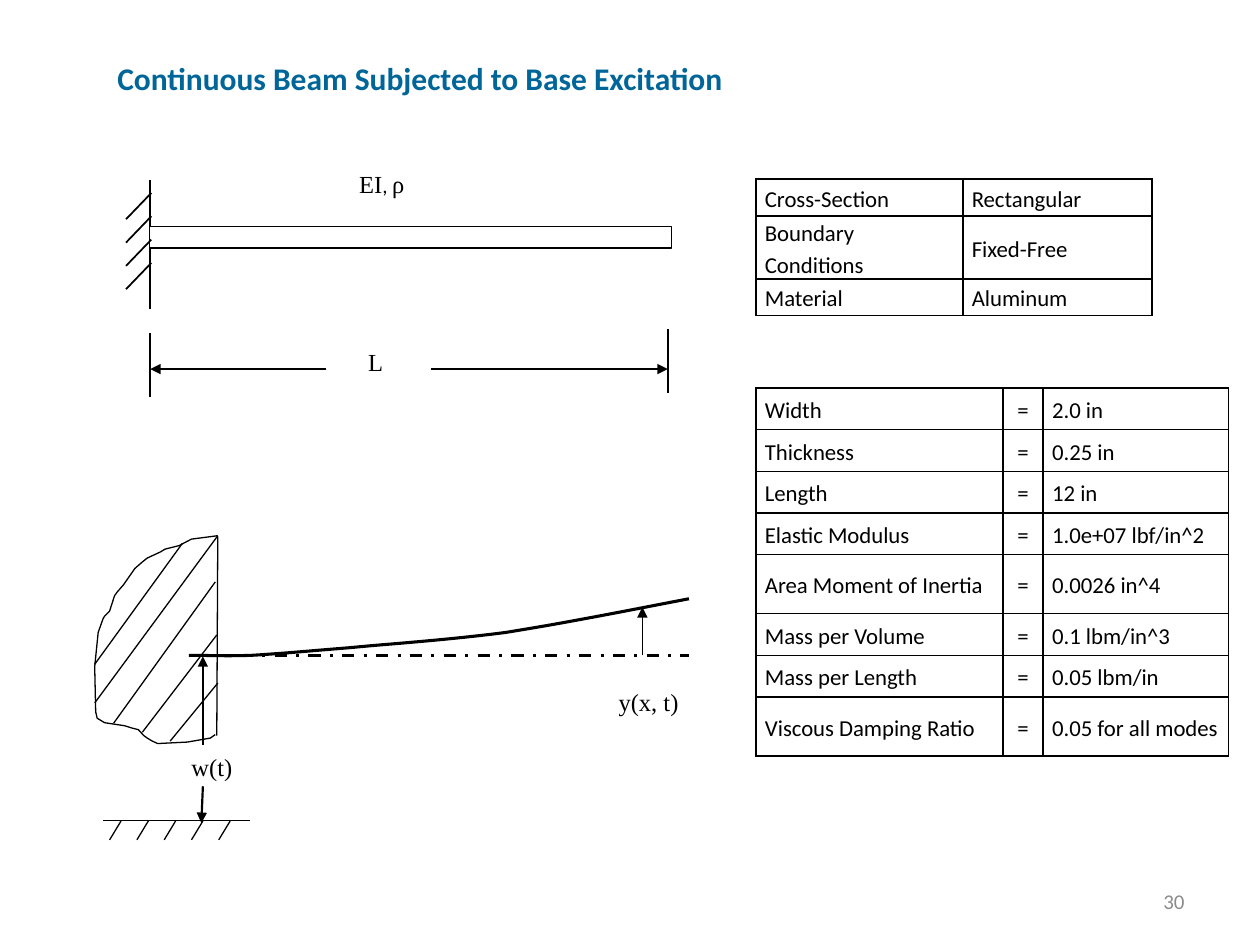
from dataclasses import dataclass
from pptx import Presentation, util as u
from pptx.dml.color import RGBColor
from pptx.enum import dml, shapes, text
from pptx.oxml import ns, xmlchemy as xc

LEFT, MID, RIGHT = text.PP_ALIGN.LEFT, text.PP_ALIGN.CENTER, text.PP_ALIGN.RIGHT


@dataclass
class Theme:
    ink: str = "000000"
    paper: str = "FFFFFF"
    blue: str = "006699"
    gray: str = "8C8C8C"
    sans: str = "Calibri"
    serif: str = "Times New Roman"
    head: float = 18
    label: float = 14
    cell: float = 13
    small: float = 12
    thin: float = 0.75
    mid: float = 1
    bold: float = 1.25
    thick: float = 1.75


def rgb(code):
    return RGBColor.from_string(code)


def add(parent, tag, **attrs):
    """Append a drawing element and return it."""
    node = xc.OxmlElement(tag)
    for key, val in attrs.items():
        node.set(key, val)
    parent.append(node)
    return node


class Sketch:
    def __init__(self, slide, theme):
        self.slide, self.art, self.th = slide, slide.shapes, theme

    def style(self, run, size, face, color=None, bold=False):
        run.font.size, run.font.name, run.font.bold = u.Pt(size), face, bold
        run.font.color.rgb = rgb(color or self.th.ink)

    def pen(self, line, width, color=None):
        line.width = u.Pt(width)
        line.color.rgb = rgb(color or self.th.ink)

    def title(self, words, x, y, w, h):
        box = self.art.title
        box.left, box.top, box.width, box.height = map(u.Cm, (x, y, w, h))
        frame = box.text_frame
        frame.text = words
        frame.vertical_anchor = text.MSO_ANCHOR.TOP
        para = frame.paragraphs[0]
        para.alignment = LEFT
        self.style(para.runs[0], self.th.head, self.th.sans, self.th.blue, True)

    def note(self, parts, x, y, w, h, inset=0.03, align=LEFT,
             anchor=text.MSO_ANCHOR.TOP):
        """Plain text box; parts holds (words, size, face, color)."""
        frame = self.art.add_textbox(*map(u.Cm, (x, y, w, h))).text_frame
        frame.word_wrap, frame.vertical_anchor = True, anchor
        frame.margin_left = frame.margin_right = u.Cm(inset)
        frame.margin_top = frame.margin_bottom = u.Cm(inset)
        para = frame.paragraphs[0]
        para.alignment = align
        for words, *look in parts:
            run = para.add_run()
            run.text = words
            self.style(run, *look)

    def rect(self, x, y, w, h, edge, words=""):
        box = self.art.add_shape(shapes.MSO_SHAPE.RECTANGLE,
                                 *map(u.Cm, (x, y, w, h)))
        box.shadow.inherit = False
        box.fill.solid()
        box.fill.fore_color.rgb = rgb(self.th.paper)
        self.pen(box.line, self.th.thin, edge)
        if words:
            frame = box.text_frame
            frame.text = words
            frame.vertical_anchor = text.MSO_ANCHOR.TOP
            para = frame.paragraphs[0]
            para.alignment, para.space_after = LEFT, u.Pt(10)
            self.style(para.runs[0], self.th.label, self.th.serif)

    def line(self, x1, y1, x2, y2, width=None, dash=None, arrow=False):
        link = self.art.add_connector(shapes.MSO_CONNECTOR.STRAIGHT,
                                      *map(u.Cm, (x1, y1, x2, y2)))
        self.pen(link.line, width or self.th.thin)
        if dash:
            link.line.dash_style = dash
        props = link._element.spPr
        if arrow:
            add(props.find(ns.qn("a:ln")), "a:tailEnd", type="triangle")
        add(props, "a:effectLst")

    def curve(self, points, width):
        pts = [(u.Cm(x), u.Cm(y)) for x, y in points]
        pen = self.art.build_freeform(*pts[0])
        pen.add_line_segments(pts[1:], close=False)
        form = pen.convert_to_shape()
        form.shadow.inherit = False
        form.fill.background()
        self.pen(form.line, width)

    def table(self, x, y, cols, rows, data, center=()):
        grid = self.art.add_table(len(rows), len(cols), *map(
            u.Cm, (x, y, sum(cols), sum(rows)))).table
        grid.first_row = grid.horz_banding = False
        for col, size in zip(grid.columns, cols):
            col.width = u.Cm(size)
        for row, size, words in zip(grid.rows, rows, data):
            row.height = u.Cm(size)
            for i, (cell, word) in enumerate(zip(row.cells, words)):
                self.cell(cell, word, MID if i in center else LEFT)

    def cell(self, cell, word, align):
        cell.text = word
        cell.vertical_anchor = text.MSO_ANCHOR.MIDDLE
        cell.margin_left = cell.margin_right = u.Cm(0.18)
        cell.margin_top = cell.margin_bottom = 0
        para = cell.text_frame.paragraphs[0]
        para.alignment, para.line_spacing = align, 1.15
        self.style(para.runs[0], self.th.cell, self.th.sans)
        props = cell._tc.get_or_add_tcPr()
        for side in "LRTB":
            edge = add(props, f"a:ln{side}", w=str(u.Pt(self.th.mid)))
            add(add(edge, "a:solidFill"), "a:srgbClr", val=self.th.ink)
        cell.fill.background()


def bezier(knots, steps=12):
    """Points along a chain of cubic curves."""
    pts = [knots[0]]
    for k in range(0, len(knots) - 1, 3):
        for n in range(1, steps + 1):
            t = n / steps
            mix = ((1 - t) ** 3, 3 * t * (1 - t) ** 2, 3 * t * t * (1 - t), t ** 3)
            pts.append(tuple(sum(m * p[a] for m, p in zip(mix, knots[k:k + 4]))
                             for a in (0, 1)))
    return pts


BEAM = [(3.81, 13.21), (4.17, 13.21), (4.55, 13.23), (5.08, 13.21),
        (5.61, 13.18), (6.15, 13.13), (7.01, 13.06), (7.85, 12.98),
        (9.04, 12.9), (10.19, 12.75), (11.33, 12.57), (12.6, 12.32),
        (13.89, 12.07)]
ROCK = [(4.39, 10.8), (3.86, 10.87), (3.61, 11), (3.33, 11.07), (3.23, 11.13),
        (2.97, 11.25), (2.87, 11.33), (2.72, 11.46), (2.49, 11.79),
        (2.36, 11.94), (2.31, 12.01), (2.21, 12.32), (2.11, 12.42),
        (2.08, 12.47), (1.98, 12.75), (1.91, 13.44), (1.93, 14.35),
        (1.96, 14.48), (2.11, 14.57), (2.51, 14.63), (2.67, 14.68),
        (2.79, 14.71), (2.9, 14.83), (2.97, 14.88), (3.07, 14.94),
        (3.18, 14.99), (3.78, 14.96), (4.24, 14.88), (4.34, 14.81)]
CUTS = [(4.39, 10.8, 1.91, 14.17), (3.68, 10.95, 1.91, 13.39),
        (4.34, 11.73, 2.29, 14.58), (4.37, 12.8, 2.87, 14.76),
        (4.39, 13.77, 3.43, 14.94)]
SETUP = [("Cross-Section", "Rectangular"),
         ("Boundary Conditions", "Fixed-Free"),
         ("Material", "Aluminum")]
VALUES = [("Width", "2.0 in"), ("Thickness", "0.25 in"), ("Length", "12 in"),
          ("Elastic Modulus", "1.0e+07 lbf/in^2"),
          ("Area Moment of Inertia", "0.0026 in^4"),
          ("Mass per Volume", "0.1 lbm/in^3"),
          ("Mass per Length", "0.05 lbm/in"),
          ("Viscous Damping Ratio", "0.05 for all modes")]


def main():
    deck = Presentation()
    deck.slide_width, deck.slide_height = u.Cm(25.4), u.Cm(19.05)
    th = Theme()
    sk = Sketch(deck.slides.add_slide(deck.slide_layouts[5]), th)

    # Title and page number
    sk.title("Continuous Beam Subjected to Base Excitation", 2.11, 1.07, 17.98, 1.02)
    sk.note([("30", th.small, th.sans, th.gray)], 18.21, 17.65, 5.92, 1.02,
            0.25, RIGHT, text.MSO_ANCHOR.MIDDLE)

    # Moving base and bent beam
    sk.line(4.17, 13.21, 13.89, 13.21, th.thick, dml.MSO_LINE.DASH_DOT)
    sk.curve(bezier(BEAM), th.thick)
    sk.line(12.95, 13.21, 12.95, 12.24, arrow=True)
    sk.line(4.39, 10.82, 4.37, 14.83)
    sk.curve(ROCK, th.thin)
    for cut in CUTS:
        sk.line(*cut)

    # Ground with hatching
    sk.line(2.08, 16.54, 5.03, 16.54)
    for i in range(5):
        x = 2.44 + 0.55 * i
        sk.line(x, 16.55, x - 0.23, 16.93)

    # Base motion arrows and labels
    sk.line(4.09, 15.21, 4.09, 13.23, th.bold, arrow=True)
    sk.line(4.09, 15.85, 4.06, 16.59, th.bold, arrow=True)
    sk.rect(12.22, 13.72, 1.75, 0.91, th.paper, "y(x, t)")
    sk.rect(3.61, 15.04, 1.68, 0.64, th.paper, "w(t)")

    # Fixed beam at rest
    sk.line(3.03, 3.63, 3.03, 6.22, th.mid)
    sk.rect(3.02, 4.57, 10.52, 0.43, th.ink)
    for i in range(4):
        y = 3.89 + 0.47 * i
        sk.line(2.54, y + 0.53, 3.05, y, th.mid)
    sk.note([("EI", th.label, th.serif), (", ", th.small, th.sans),
             ("ρ", th.label, th.serif)], 7.21, 3.38, 1.98, 0.94)

    # Length dimension
    sk.line(3.03, 6.71, 3.03, 8, th.mid)
    sk.line(13.46, 6.63, 13.46, 7.92, th.mid)
    sk.line(6.58, 7.44, 3.03, 7.44, arrow=True)
    sk.line(8.69, 7.44, 13.46, 7.44, arrow=True)
    sk.note([("L", th.label, th.serif)], 7.39, 6.96, 0.91, 1.3)

    # Property tables
    sk.table(15.24, 3.61, (4.17, 3.81), (0.74, 1.27, 0.74), SETUP)
    tall = [1.19 if i in (4, 7) else 0.84 for i in range(len(VALUES))]
    sk.table(15.24, 7.82, (4.98, 0.81, 3.73), tall,
             [(name, "=", val) for name, val in VALUES], center=(1,))

    deck.save("out.pptx")


if __name__ == "__main__":
    main()
